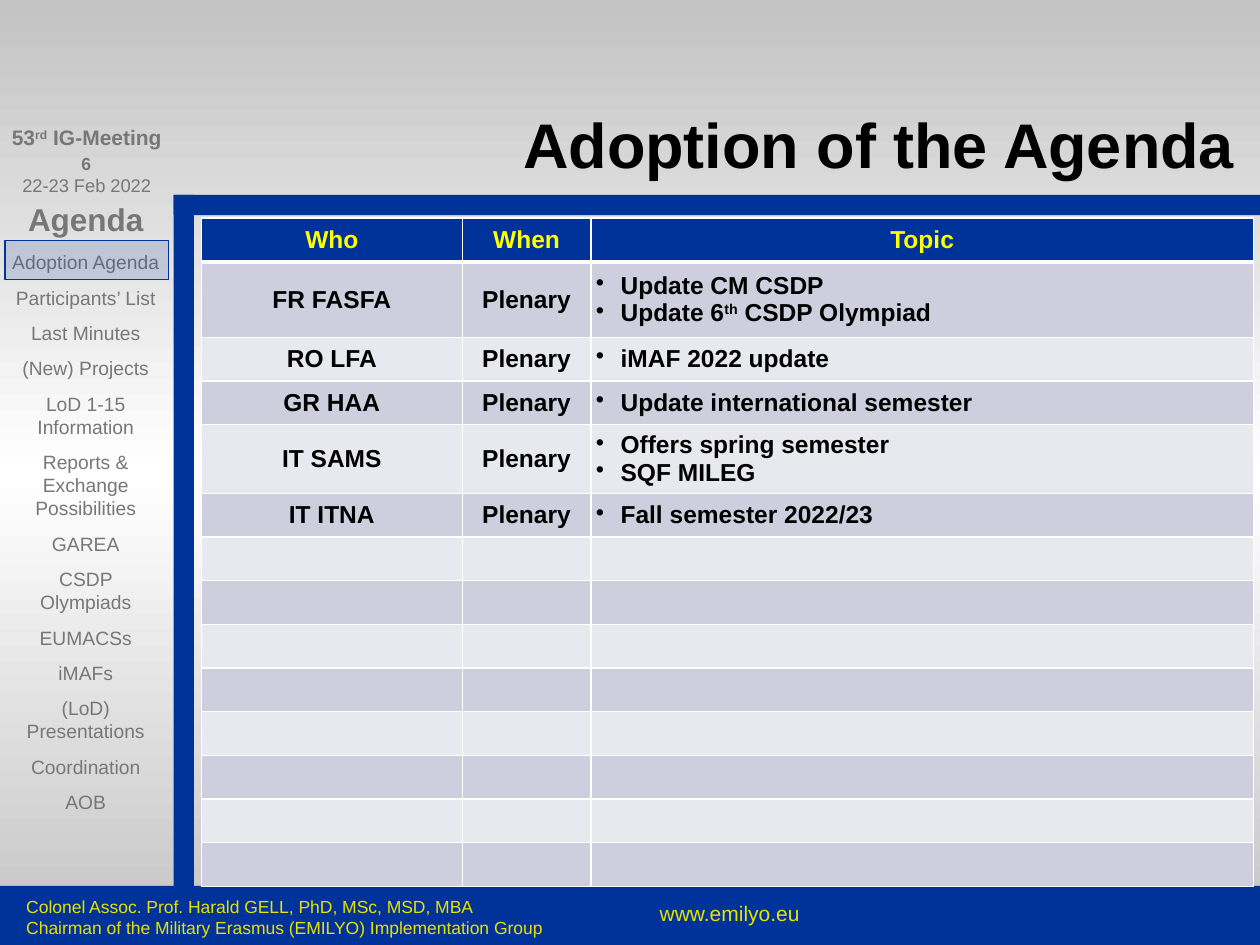
import lxml.etree
import pptx
import pptx.dml.color
import pptx.enum.shapes
import pptx.enum.text
import pptx.oxml
import pptx.oxml.ns
import pptx.util

Cm = pptx.util.Cm
Pt = pptx.util.Pt
RGBColor = pptx.dml.color.RGBColor
ALIGN = pptx.enum.text.PP_ALIGN
ANCHOR = pptx.enum.text.MSO_ANCHOR
qn = pptx.oxml.ns.qn

BLUE = RGBColor(0x00, 0x33, 0x99)
GREY = RGBColor(0x77, 0x77, 0x77)
SILVER = RGBColor(0xC3, 0xC3, 0xC3)
WHITE = RGBColor(0xFF, 0xFF, 0xFF)
BLACK = RGBColor(0x00, 0x00, 0x00)
YELLOW = RGBColor(0xFF, 0xFF, 0x00)
GOLD = RGBColor(0xE7, 0xE2, 0x00)
BAND_DARK = RGBColor(0xCE, 0xCE, 0xDE)
BAND_LIGHT = RGBColor(0xE8, 0xE8, 0xEF)

FONT = "Arial"
SUPERSCRIPT_MARK = "^"
CELL_SIZE = 14

MENU = [
    "Adoption Agenda", "Participants’ List", "Last Minutes", "(New) Projects",
    "LoD 1-15 Information", "Reports & Exchange Possibilities", "GAREA",
    "CSDP Olympiads", "EUMACSs", "iMAFs", "(LoD) Presentations",
    "Coordination", "AOB",
]
HEADINGS = ["Who", "When", "Topic"]
AGENDA = [
    ("FR FASFA", ["Update CM CSDP", "Update 6^th^ CSDP Olympiad"]),
    ("RO LFA", ["iMAF 2022 update"]),
    ("GR HAA", ["Update international semester"]),
    ("IT SAMS", ["Offers spring semester", "SQF MILEG"]),
    ("IT ITNA", ["Fall semester 2022/23"]),
]
EMPTY_ROWS = 8
COLUMN_WIDTHS = [5.26, 2.59, 13.36]
ROW_HEIGHTS = [0.89, 1.52, 0.88, 0.88, 1.31] + [0.88] * (1 + EMPTY_ROWS)


def add_bullet(para):
    properties = para._p.get_or_add_pPr()
    properties.set("marL", str(Cm(0.5)))
    properties.set("indent", str(-Cm(0.5)))
    bullet = lxml.etree.SubElement(properties, qn("a:buChar"))
    bullet.set("char", "•")


def write(frame, text, size, color, bold=False, align=ALIGN.LEFT,
          before=0, after=0, bullet=False):
    first = frame.paragraphs[0]
    para = frame.add_paragraph() if first.runs else first
    if bullet:
        add_bullet(para)
    para.alignment = align
    para.space_before = Pt(before)
    para.space_after = Pt(after)
    for index, part in enumerate(text.split(SUPERSCRIPT_MARK)):
        span = para.add_run()
        span.text = part
        span.font.name = FONT
        span.font.size = Pt(size)
        span.font.bold = bold
        span.font.color.rgb = color
        if index % 2:
            span.font._element.set("baseline", "30000")


def add_box(page, left, top, width, height, inset=None, anchor=ANCHOR.TOP, wrap=True):
    box = page.shapes.add_textbox(Cm(left), Cm(top), Cm(width), Cm(height))
    frame = box.text_frame
    frame.word_wrap = wrap
    frame.vertical_anchor = anchor
    if inset is not None:
        frame.margin_left = frame.margin_right = Cm(inset)
        frame.margin_top = frame.margin_bottom = Cm(inset)
    return frame


def add_bar(page, left, top, width, height):
    bar = page.shapes.add_shape(
        pptx.enum.shapes.MSO_SHAPE.RECTANGLE, Cm(left), Cm(top), Cm(width), Cm(height))
    bar.shadow.inherit = False
    bar.fill.solid()
    bar.fill.fore_color.rgb = BLUE
    bar.line.fill.background()
    return bar


def add_highlight(page):
    marker = add_bar(page, 0.1, 4.85, 3.3, 0.79)
    color = marker._element.spPr.find(qn("a:solidFill")).find(qn("a:srgbClr"))
    lxml.etree.SubElement(color, qn("a:alpha")).set("val", "16000")
    marker.line.color.rgb = BLUE
    marker.line.width = Pt(0.75)


def paint_background(page):
    fill = page.background.fill
    fill.gradient()
    fill.gradient_angle = 90
    stops = page._element.find(".//" + qn("a:gsLst"))
    for stop in list(stops):
        stops.remove(stop)
    for position, color in ((0, SILVER), (50000, WHITE), (100000, SILVER)):
        stop = lxml.etree.SubElement(stops, qn("a:gs"), pos=str(position))
        lxml.etree.SubElement(stop, qn("a:srgbClr"), val=str(color))


def style_cell(cell, fill, bottom=1):
    cell.margin_left = cell.margin_right = Cm(0.1)
    cell.margin_top = cell.margin_bottom = Cm(0.1)
    cell.vertical_anchor = ANCHOR.MIDDLE
    properties = cell._tc.get_or_add_tcPr()
    for side, width in (("L", 1), ("R", 1), ("T", 1), ("B", bottom)):
        border = lxml.etree.SubElement(properties, qn("a:ln" + side), w=str(Pt(width)))
        paint = lxml.etree.SubElement(border, qn("a:solidFill"))
        lxml.etree.SubElement(paint, qn("a:srgbClr"), val=str(WHITE))
    cell.fill.solid()
    cell.fill.fore_color.rgb = fill
    ending = cell.text_frame.paragraphs[0]._p.get_or_add_endParaRPr()
    ending.set("sz", str(CELL_SIZE * 100))


def add_agenda_table(page):
    table = page.shapes.add_table(
        len(ROW_HEIGHTS), len(COLUMN_WIDTHS), Cm(4.06), Cm(4.39),
        Cm(sum(COLUMN_WIDTHS)), Cm(sum(ROW_HEIGHTS))).table
    for column, width in zip(table.columns, COLUMN_WIDTHS):
        column.width = Cm(width)
    for index, (row, height) in enumerate(zip(table.rows, ROW_HEIGHTS)):
        row.height = Cm(height)
        band = BAND_DARK if index % 2 else BAND_LIGHT
        for cell in row.cells:
            style_cell(cell, band if index else BLUE, bottom=1 if index else 3)
    for column, heading in enumerate(HEADINGS):
        write(table.cell(0, column).text_frame, heading, CELL_SIZE, YELLOW,
              bold=True, align=ALIGN.CENTER)
    for row, (who, topics) in enumerate(AGENDA, start=1):
        for column, text in enumerate((who, "Plenary")):
            write(table.cell(row, column).text_frame, text, CELL_SIZE, BLACK,
                  bold=True, align=ALIGN.CENTER)
        for topic in topics:
            write(table.cell(row, 2).text_frame, topic, CELL_SIZE, BLACK,
                  bold=True, bullet=True)


def add_sidebar(page):
    number = add_box(page, 1.12, 2.95, 1.24, 0.69, wrap=False)
    write(number, "6", 10, GREY, bold=True, align=ALIGN.CENTER)
    menu = add_box(page, 0.13, 3.94, 3.2, 13.79, inset=0.1)
    write(menu, "Agenda", 18, GREY, bold=True, align=ALIGN.CENTER, after=7)
    for entry in MENU:
        write(menu, entry, 11, GREY, align=ALIGN.CENTER, after=7)
    meeting = add_box(page, 0, 2.51, 3.5, 1.68, inset=0)
    write(meeting, "53^rd^ IG-Meeting", 12, GREY, bold=True, align=ALIGN.CENTER)
    write(meeting, "22-23 Feb 2022", 10.5, GREY, align=ALIGN.CENTER, before=14)


def add_footer(page):
    add_bar(page, 0, 17.86, 25.4, 1.19)
    website = add_box(page, 12.45, 18.03, 4.52, 0.89)
    write(website, "www.emilyo.eu", 12, GOLD, align=ALIGN.CENTER)
    author = add_box(page, 0.28, 17.93, 11.13, 0.89)
    for line in ("Colonel Assoc. Prof. Harald GELL, PhD, MSc, MSD, MBA",
                 "Chairman of the Military Erasmus (EMILYO) Implementation Group"):
        write(author, line, 10, GOLD)


def main():
    deck = pptx.Presentation()
    deck.slide_width = Cm(25.4)
    deck.slide_height = Cm(19.05)
    page = deck.slides.add_slide(deck.slide_layouts[6])
    paint_background(page)
    add_bar(page, 3.5, 3.93, 0.41, 14.25)
    add_bar(page, 3.5, 3.93, 21.9, 0.41)
    add_sidebar(page)
    add_footer(page)
    title = add_box(page, 3.5, 0.48, 21.39, 3.18, inset=0, anchor=ANCHOR.BOTTOM)
    write(title, "Adoption of the Agenda", 36, BLACK, bold=True, align=ALIGN.RIGHT)
    add_agenda_table(page)
    add_highlight(page)
    deck.save("out.pptx")


if __name__ == "__main__":
    main()
